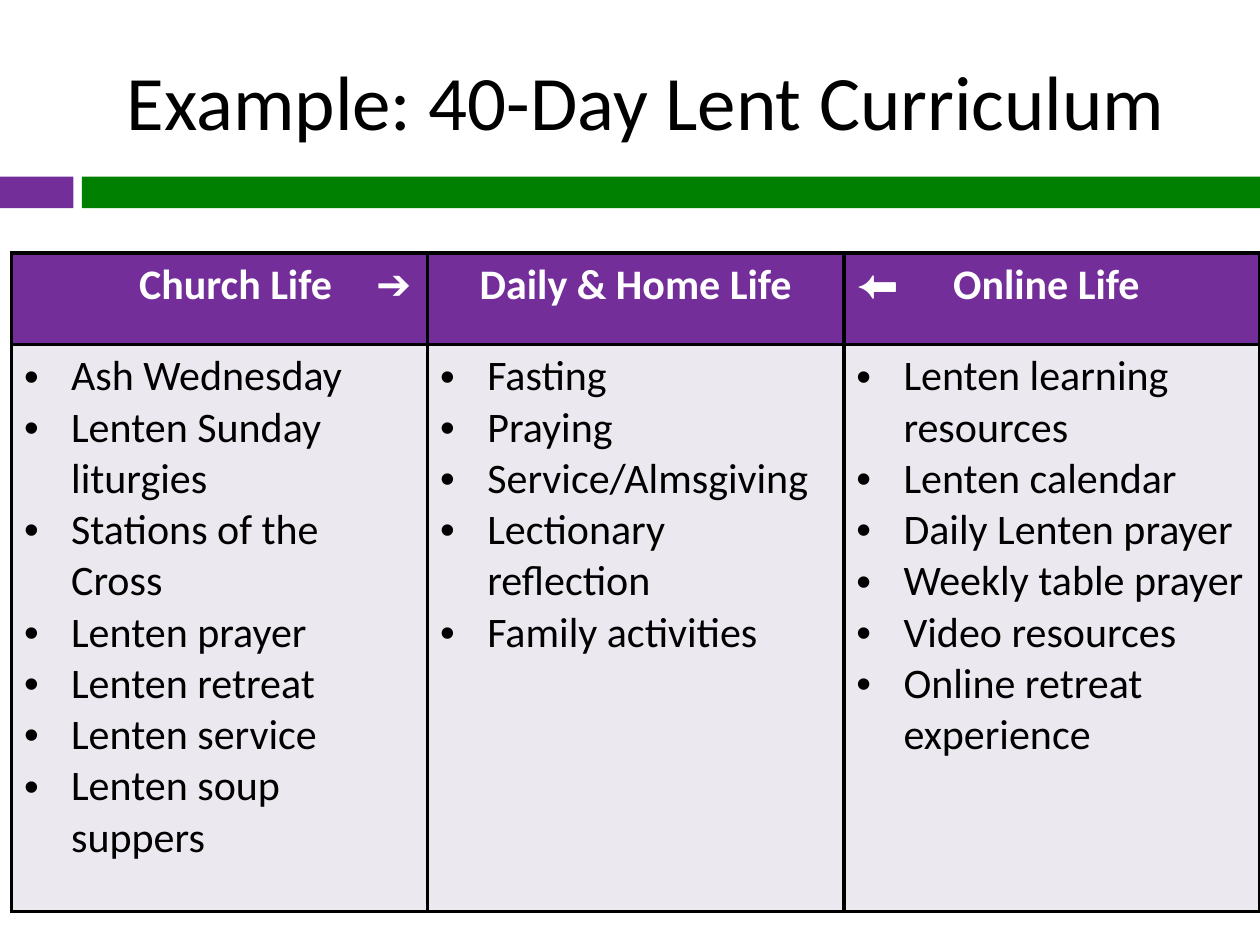
from lxml.etree import SubElement
from pptx import Presentation
from pptx.dml.color import RGBColor
from pptx.enum.shapes import MSO_SHAPE
from pptx.enum.text import MSO_ANCHOR, PP_ALIGN
from pptx.oxml import parse_xml
from pptx.oxml.ns import nsdecls, qn
from pptx.util import Cm, Pt

PURPLE, GREEN, LILAC = "732E9A", "008000", "EBE8EF"
BLACK, WHITE = "000000", "FFFFFF"

# Header text and its tab stops in centimetres
HEADERS = [
    ("\tChurch Life\t➔", [2.32, 7.1]),
    ("Daily & Home Life", []),
    ("⬅\tOnline Life", [1.95]),
]
ACTIVITIES = [
    ["Ash Wednesday", "Lenten Sunday liturgies", "Stations of the Cross",
     "Lenten prayer", "Lenten retreat", "Lenten service", "Lenten soup suppers"],
    ["Fasting", "Praying", "Service/Almsgiving", "Lectionary reflection",
     "Family activities"],
    ["Lenten learning resources", "Lenten calendar", "Daily Lenten prayer",
     "Weekly table prayer", "Video resources", "Online retreat experience"],
]


def color(value):
    return RGBColor.from_string(value)


class SlideBuilder:
    font_name = "Calibri"
    title_size = 44
    table_size = 24
    border_width = 2.25
    bullet_indent = Cm(0.95)

    def __init__(self, slide):
        self.slide = slide

    def format_runs(self, paragraph, size, font_color, bold=False):
        for run in paragraph.runs:
            run.font.name = self.font_name
            run.font.size = Pt(size)
            run.font.bold = bold
            run.font.color.rgb = color(font_color)

    def add_title(self, text, left, top, width, height):
        title = self.slide.shapes.title
        title.left, title.top = Cm(left), Cm(top)
        title.width, title.height = Cm(width), Cm(height)
        frame = title.text_frame
        frame.text = text
        frame.vertical_anchor = MSO_ANCHOR.MIDDLE
        paragraph = frame.paragraphs[0]
        paragraph.alignment = PP_ALIGN.CENTER
        self.format_runs(paragraph, self.title_size, BLACK)

    def add_bar(self, left, top, width, height, fill):
        bar = self.slide.shapes.add_shape(
            MSO_SHAPE.RECTANGLE, Cm(left), Cm(top), Cm(width), Cm(height))
        bar.shadow.inherit = False
        bar.fill.solid()
        bar.fill.fore_color.rgb = color(fill)
        bar.line.fill.background()

    def add_table(self, left, top, width, row_heights, headers, columns):
        table = self.slide.shapes.add_table(
            len(row_heights), len(columns), Cm(left), Cm(top),
            Cm(width), Cm(sum(row_heights))).table
        for row, height in zip(table.rows, row_heights):
            row.height = Cm(height)
        for index, (header, items) in enumerate(zip(headers, columns)):
            table.columns[index].width = Cm(width / len(columns))
            self.fill_header(table.cell(0, index), *header)
            self.fill_list(table.cell(1, index), items)

    def fill_header(self, cell, text, tab_stops):
        self.style_cell(cell, PURPLE)
        cell.text_frame.text = text
        paragraph = cell.text_frame.paragraphs[0]
        paragraph.alignment = PP_ALIGN.LEFT if tab_stops else PP_ALIGN.CENTER
        if tab_stops:
            properties = paragraph._p.get_or_add_pPr()
            tab_list = SubElement(properties, qn("a:tabLst"))
            for stop in tab_stops:
                SubElement(tab_list, qn("a:tab"), pos=str(Cm(stop)), algn="l")
        self.format_runs(paragraph, self.table_size, WHITE, bold=True)

    def fill_list(self, cell, items):
        self.style_cell(cell, LILAC)
        cell.text_frame.text = "\n".join(items)
        for paragraph in cell.text_frame.paragraphs:
            properties = paragraph._p.get_or_add_pPr()
            properties.set("marL", str(self.bullet_indent))
            properties.set("indent", str(-self.bullet_indent))
            SubElement(properties, qn("a:buFont"), typeface="Arial")
            SubElement(properties, qn("a:buChar"), char="•")
            self.format_runs(paragraph, self.table_size, BLACK)

    def style_cell(self, cell, fill):
        cell.fill.solid()
        cell.fill.fore_color.rgb = color(fill)
        properties = cell._tc.get_or_add_tcPr()
        for position, side in enumerate(("lnL", "lnR", "lnT", "lnB")):
            properties.insert(position, parse_xml(
                f'<a:{side} {nsdecls("a")} w="{Pt(self.border_width)}"><a:solidFill>'
                f'<a:srgbClr val="{BLACK}"/></a:solidFill></a:{side}>'))


def main():
    presentation = Presentation()
    presentation.slide_width, presentation.slide_height = Cm(25.4), Cm(19.05)
    slide = presentation.slides.add_slide(presentation.slide_layouts[5])
    builder = SlideBuilder(slide)
    builder.add_bar(0, 3.56, 1.48, 0.64, PURPLE)
    builder.add_bar(1.65, 3.56, 23.75, 0.64, GREEN)
    builder.add_title("Example: 40-Day Lent Curriculum", 1.7, 0.64, 22.66, 2.74)
    builder.add_table(0.23, 5.1, 25.17, [1.85, 11.43], HEADERS, ACTIVITIES)
    presentation.save("out.pptx")


if __name__ == "__main__":
    main()
